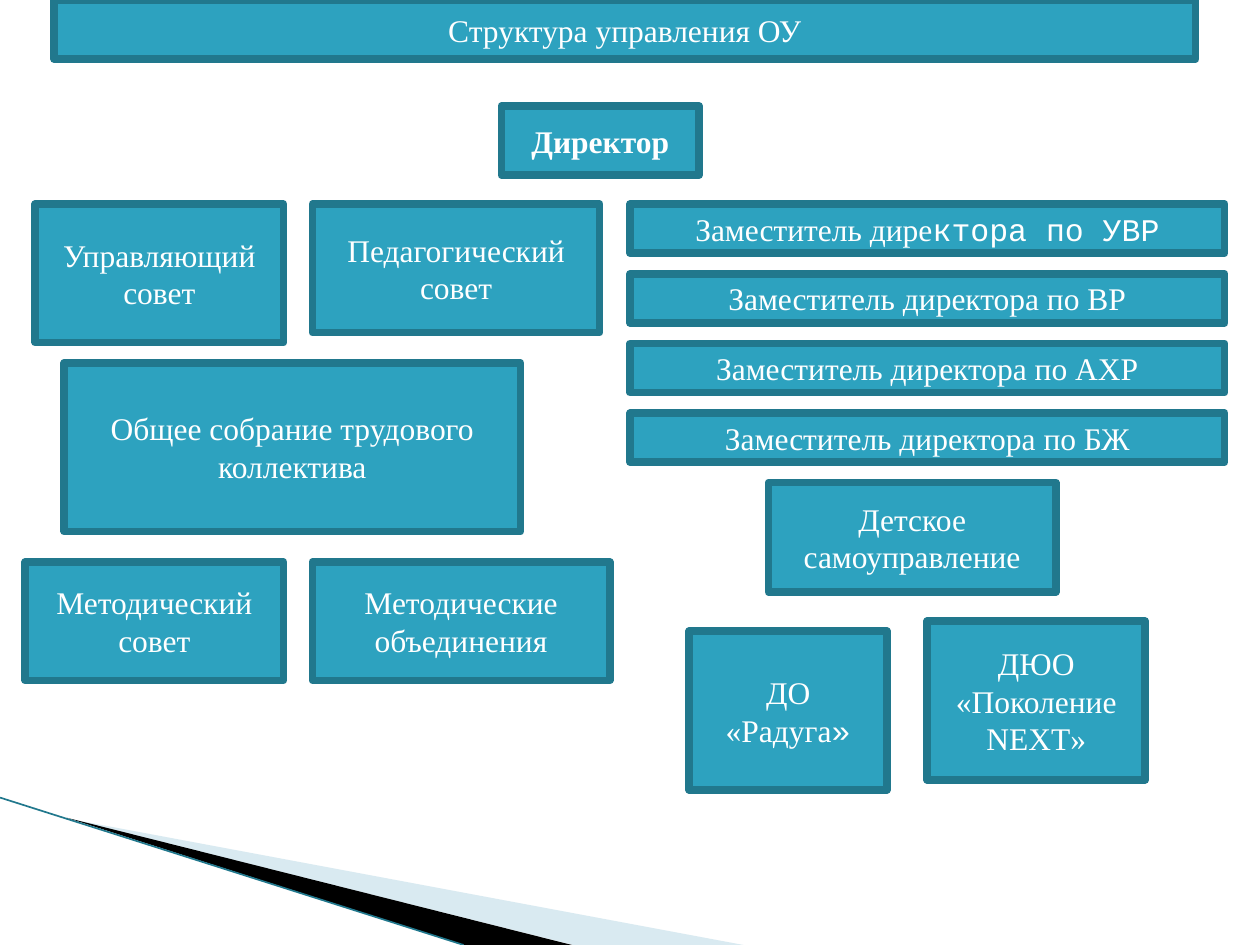
from dataclasses import dataclass

from lxml import etree
from pptx import Presentation
from pptx import util as u
from pptx.dml.color import RGBColor
from pptx.enum import shapes, text
from pptx.oxml import ns


@dataclass(frozen=True)
class Theme:
    """Colours, fonts and sizes of the chart."""
    fill: str = "2DA2BF"
    border: str = "21788D"
    ink: str = "FFFFFF"
    pale: str = "A0CBDC"
    dark: str = "000000"
    font: str = "Times New Roman"
    mono: str = "Courier New"
    size: float = 18
    border_width: float = 4.33
    hairline: float = 0.95


class Chart:
    """Draws on a slide with a grid of 100 columns and 75 rows."""

    def __init__(self, deck, theme):
        """Add a blank slide and measure one grid cell."""
        self.theme = theme
        self.slide = deck.slides.add_slide(deck.slide_layouts[6])
        self.cell = deck.slide_width / 100

    def grid(self, *values):
        """Turn grid units into slide lengths."""
        return [u.Emu(round(value * self.cell)) for value in values]

    def paint(self, shape, colour):
        """Give a shape a solid fill and no shadow."""
        shape.shadow.inherit = False
        shape.fill.solid()
        shape.fill.fore_color.rgb = RGBColor.from_string(colour)

    def outline(self, line, width):
        """Set the line colour and width."""
        line.color.rgb = RGBColor.from_string(self.theme.border)
        line.width = u.Pt(width)

    def box(self, place, label, mono="", bold=False):
        """Add a labelled box, with an optional monospaced ending."""
        box = self.slide.shapes.add_shape(shapes.MSO_SHAPE.RECTANGLE, *self.grid(*place))
        self.paint(box, self.theme.fill)
        self.outline(box.line, self.theme.border_width)
        frame = box.text_frame
        frame.word_wrap = True
        frame.vertical_anchor = text.MSO_ANCHOR.MIDDLE
        para = frame.paragraphs[0]
        para.text = label
        para.alignment = text.PP_ALIGN.CENTER
        if mono:
            para.add_run().text = mono
        for span, name in zip(para.runs, (self.theme.font, self.theme.mono)):
            span.font.name = name
            span.font.size = u.Pt(self.theme.size)
            span.font.bold = bold
            span.font.color.rgb = RGBColor.from_string(self.theme.ink)

    def wedge(self, points, colour, opacity=100):
        """Add a filled polygon without an outline."""
        start, *rest = [self.grid(*point) for point in points]
        builder = self.slide.shapes.build_freeform(*start)
        builder.add_line_segments(rest)
        wedge = builder.convert_to_shape()
        self.paint(wedge, colour)
        wedge.line.fill.background()
        tint = wedge.fill._xPr.find(".//" + ns.qn("a:srgbClr"))
        etree.SubElement(tint, ns.qn("a:alpha"), val=str(opacity * 1000))

    def line(self, *ends):
        """Add a thin straight line."""
        line = self.slide.shapes.add_connector(shapes.MSO_CONNECTOR.STRAIGHT, *self.grid(*ends))
        self.outline(line.line, self.theme.hairline)
        etree.SubElement(line._element.spPr, ns.qn("a:effectLst"))


def main():
    """Build the management structure slide."""
    deck = Presentation()
    deck.slide_width, deck.slide_height = u.Inches(10), u.Inches(7.5)
    theme = Theme()
    chart = Chart(deck, theme)

    chart.wedge([(5.5, 65), (59, 75), (45.5, 75)], theme.pale, 40)
    chart.wedge([(5.3, 64.9), (45.4, 75), (36.8, 75)], theme.dark)
    chart.line(0, 63.3, 36.8, 75)

    chart.box((4.3, 0, 90.6, 4.7), "Структура управления ОУ")
    chart.box((39.8, 8.4, 15.7, 5.5), "Директор", bold=True)

    top, left, middle = 16.2, 2.8, 24.8
    chart.box((left, top, 19.7, 11), "Управляющий совет")
    chart.box((middle, top, 22.8, 10.2), "Педагогический совет")
    chart.box((5.1, 28.8, 36.2, 13.4), "Общее собрание трудового коллектива")
    chart.box((2, 44.6, 20.5, 9.4), "Методический совет")
    chart.box((middle, 44.6, 23.6, 9.4), "Методические объединения")

    deputies = [
        ("Заместитель дире", "ктора по УВР"),
        ("Заместитель директора по ВР",),
        ("Заместитель директора по АХР",),
        ("Заместитель директора по БЖ",),
    ]
    for row, label in enumerate(deputies):
        chart.box((50, top + row * 5.53, 47.2, 3.9), *label)

    chart.box((61, 38.3, 22.8, 8.7), "Детское самоуправление")
    chart.box((54.7, 50.1, 15.7, 12.6), "ДО «Радуга", "»")
    chart.box((73.6, 49.3, 17.3, 12.6), "ДЮО «Поколение NEXT»")

    deck.save("out.pptx")


if __name__ == "__main__":
    main()
